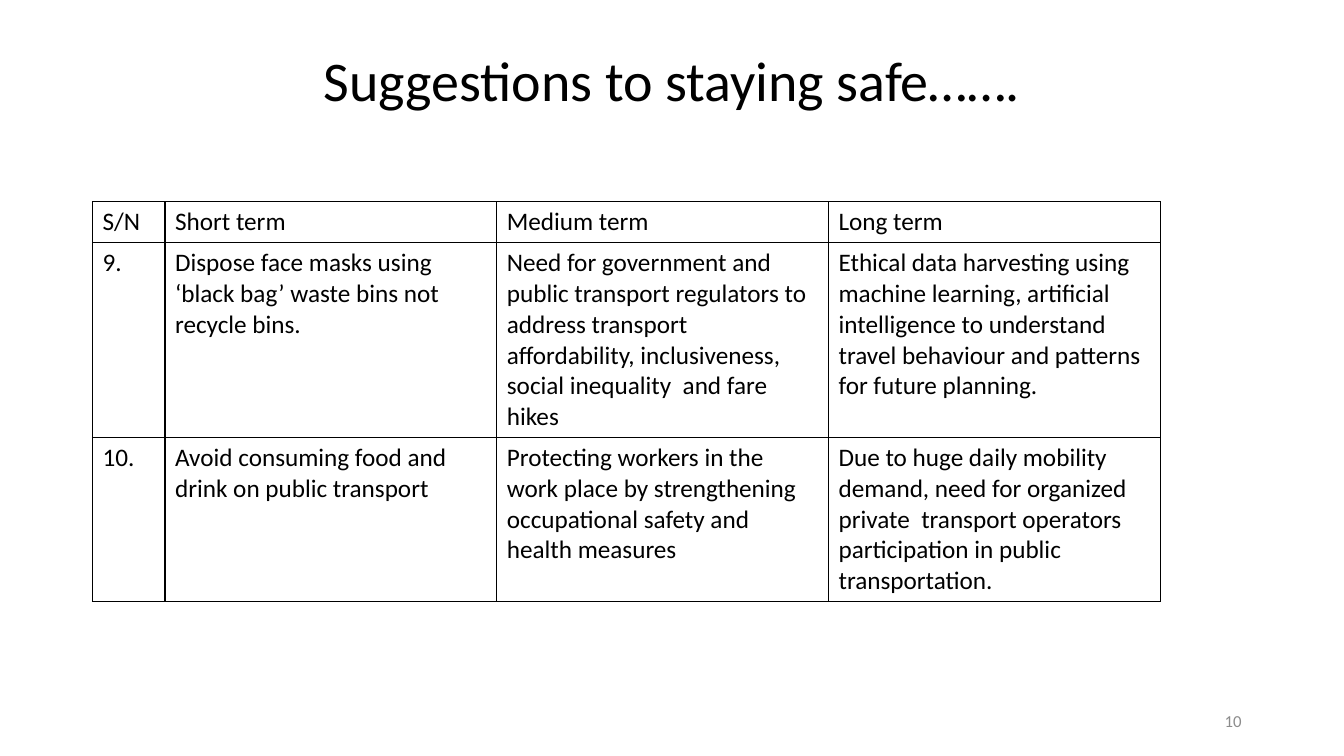
from lxml import etree
from pptx import Presentation
from pptx.dml.color import RGBColor
from pptx.enum.text import MSO_ANCHOR, PP_ALIGN
from pptx.oxml.ns import qn
from pptx.util import Cm, Pt

BLACK = RGBColor(0x00, 0x00, 0x00)
GREY = RGBColor(0x8C, 0x8C, 0x8C)
MIDDLE = MSO_ANCHOR.MIDDLE
LEFT, CENTER, RIGHT = PP_ALIGN.LEFT, PP_ALIGN.CENTER, PP_ALIGN.RIGHT
TITLE_ONLY = 5

TITLE_FORMAT = {"name": "Calibri", "size": Pt(40), "bold": False}
CELL_FORMAT = {"name": "Calibri", "size": Pt(18), "bold": False}
NUMBER_FORMAT = {"name": "Calibri", "size": Pt(12), "bold": False}

COLUMN_WIDTHS = [1.83, 8.36, 8.36, 8.36]
ROW_HEIGHTS = [1.04, 4.88, 4.13]
SUGGESTIONS = [
    ["S/N", "Short term", "Medium term", "Long term"],
    [
        "9.",
        "Dispose face masks using ‘black bag’ waste bins not recycle bins.",
        "Need for government and public transport regulators to address transport "
        "affordability, inclusiveness, social inequality  and fare hikes",
        "Ethical data harvesting using machine learning, artificial intelligence to "
        "understand travel behaviour and patterns for future planning.",
    ],
    [
        "10.",
        "Avoid consuming food and drink on public transport",
        "Protecting workers in the work place by strengthening occupational safety "
        "and health measures",
        "Due to huge daily mobility demand, need for organized private  transport "
        "operators participation in public transportation.",
    ],
]


def write_text(frame, text, formats, color, align):
    para = frame.paragraphs[0]
    para.alignment = align
    span = para.add_run()
    span.text = text
    for name, value in formats.items():
        setattr(span.font, name, value)
    span.font.color.rgb = color
    return para


def add_title(page, left, top, width, height):
    title = page.shapes.title
    title.left, title.top, title.width, title.height = left, top, width, height
    title.text_frame.vertical_anchor = MIDDLE
    para = write_text(title.text_frame, "Suggestions to staying safe…….",
                      TITLE_FORMAT, BLACK, CENTER)
    para.line_spacing = 0.9


def draw_borders(cell):
    properties = cell._tc.get_or_add_tcPr()
    for position, side in enumerate(("lnL", "lnR", "lnT", "lnB")):
        line = etree.Element(qn(f"a:{side}"), w=str(Pt(1)))
        fill = etree.SubElement(line, qn("a:solidFill"))
        etree.SubElement(fill, qn("a:srgbClr"), val=str(BLACK))
        properties.insert(position, line)


def add_suggestions(page, left, top):
    width, height = Cm(sum(COLUMN_WIDTHS)), Cm(sum(ROW_HEIGHTS))
    table = page.shapes.add_table(len(ROW_HEIGHTS), len(COLUMN_WIDTHS),
                                  left, top, width, height).table
    table.first_row = False
    table.horz_banding = False
    for column, column_width in zip(table.columns, COLUMN_WIDTHS):
        column.width = Cm(column_width)
    for row, row_height, texts in zip(table.rows, ROW_HEIGHTS, SUGGESTIONS):
        row.height = Cm(row_height)
        for cell, text in zip(row.cells, texts):
            cell.fill.background()
            write_text(cell.text_frame, text, CELL_FORMAT, BLACK, LEFT)
            draw_borders(cell)


def add_page_number(page, left, top, width, height):
    frame = page.shapes.add_textbox(left, top, width, height).text_frame
    frame.word_wrap = True
    frame.vertical_anchor = MIDDLE
    write_text(frame, "10", NUMBER_FORMAT, GREY, RIGHT)


def main():
    deck = Presentation()
    deck.slide_width, deck.slide_height = Cm(33.87), Cm(19.05)
    page = deck.slides.add_slide(deck.slide_layouts[TITLE_ONLY])
    margin = Cm(2.33)
    content_width = deck.slide_width - 2 * margin
    number_width = Cm(7.62)
    add_title(page, margin, Cm(1.01), content_width, Cm(2.16))
    add_suggestions(page, margin, Cm(5.08))
    add_page_number(page, margin + content_width - number_width, Cm(17.65),
                    number_width, Cm(1.01))
    deck.save("out.pptx")


if __name__ == "__main__":
    main()
